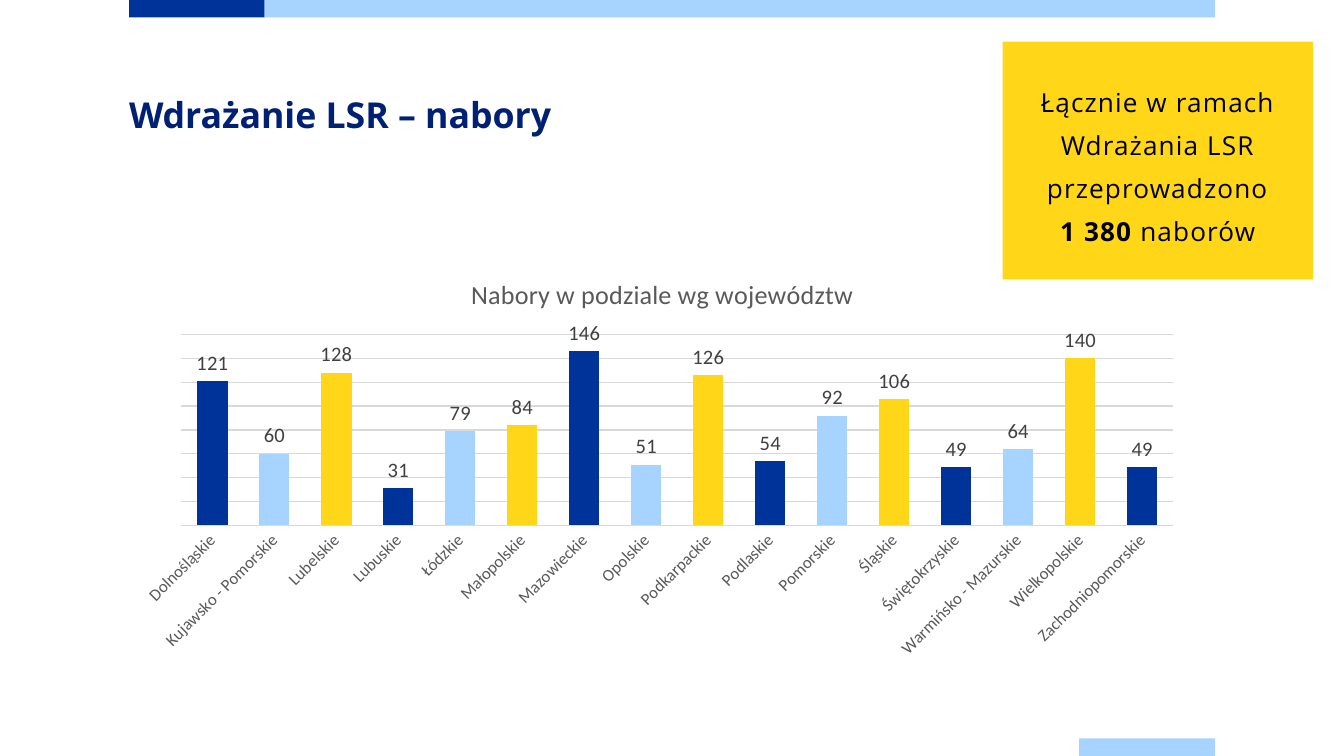
from lxml.etree import SubElement
from pptx import Presentation
from pptx.chart.data import CategoryChartData
from pptx.dml.color import RGBColor
from pptx.enum.chart import XL_CHART_TYPE as ChartType, XL_LABEL_POSITION as LabelPosition
from pptx.enum.chart import XL_TICK_MARK as TickMark
from pptx.enum.shapes import MSO_SHAPE as Shape
from pptx.enum.text import MSO_ANCHOR as Anchor, MSO_AUTO_SIZE as AutoSize, PP_ALIGN as Align
from pptx.oxml import parse_xml
from pptx.oxml.ns import nsdecls, qn
from pptx.util import Inches, Pt

WIDTH = 10
HEIGHT = WIDTH * 9 / 16
MARGIN, COLUMN, BAND = 0.96, 1.01, 0.13
CONTENT = 8 * COLUMN
CHART_LEFT, CHART_TOP, CHART_WIDTH, CHART_HEIGHT = 0.92, 1.96, 7.97, 3
COLORS = {
    "navy": "003399", "sky": "A6D3FF", "yellow": "FFD618", "title": "002073",
    "black": "000000", "gray": "595959", "label": "404040", "grid": "D9D9D9",
}
BAR_CYCLE = ("navy", "sky", "yellow")
CALLS = {
    "Dolnośląskie": 121, "Kujawsko - Pomorskie": 60, "Lubelskie": 128, "Lubuskie": 31,
    "Łódzkie": 79, "Małopolskie": 84, "Mazowieckie": 146, "Opolskie": 51,
    "Podkarpackie": 126, "Podlaskie": 54, "Pomorskie": 92, "Śląskie": 106,
    "Świętokrzyskie": 49, "Warmińsko - Mazurskie": 64, "Wielkopolskie": 140,
    "Zachodniopomorskie": 49,
}
TITLE_SHARES = {"x": 0.32, "y": 0.02}
PLOT_SHARES = {
    "x": 0.43 / CHART_WIDTH, "y": 0.53 / CHART_HEIGHT,
    "w": 7.38 / CHART_WIDTH, "h": 1.42 / CHART_HEIGHT,
}


def color(name):
    """Return the named colour."""
    return RGBColor.from_string(COLORS[name])


def paint(target, name):
    """Give an object a solid fill."""
    target.fill.solid()
    target.fill.fore_color.rgb = color(name)


def style_font(font, size, name, family="Calibri", bold=False):
    """Format a font."""
    font.size, font.name, font.bold = Pt(size), family, bold
    font.color.rgb = color(name)


def style_line(line, name):
    """Format a thin chart line."""
    line.color.rgb = color(name)
    line.width = Pt(0.75)


def add_run(paragraph, text, spacing=0, **style):
    """Add a run of formatted text with letter spacing in points."""
    run = paragraph.add_run()
    run.text = text
    style_font(run.font, **style)
    if spacing:
        run.font._element.set("spc", str(round(spacing * 100)))


def add_block(slide, left, top, width, height, fill):
    """Add a plain filled rectangle."""
    box = map(Inches, (left, top, width, height))
    block = slide.shapes.add_shape(Shape.RECTANGLE, *box)
    block.shadow.inherit = False
    block.line.fill.background()
    paint(block, fill)
    return block


def place_title(slide, text):
    """Move and format the title placeholder."""
    title = slide.shapes.title
    title.left, title.top = Inches(MARGIN), Inches(0.67)
    title.width, title.height = Inches(CONTENT), Inches(0.8)
    frame = title.text_frame
    frame.margin_left = frame.margin_right = frame.margin_top = frame.margin_bottom = 0
    frame.vertical_anchor, frame.word_wrap = Anchor.TOP, True
    frame.auto_size = AutoSize.NONE
    paragraph = frame.paragraphs[0]
    paragraph.alignment, paragraph.line_spacing = Align.LEFT, Pt(24.5)
    add_run(paragraph, text, size=19.1, name="title", family="Open Sans", bold=True)


def add_callout(slide, lead, number, unit):
    """Add the yellow box with the total."""
    callout = add_block(slide, 7.46, 0.31, 2.31, 1.77, "yellow")
    frame = callout.text_frame
    frame.word_wrap, frame.vertical_anchor = True, Anchor.MIDDLE
    paragraph = frame.paragraphs[0]
    paragraph.alignment, paragraph.line_spacing = Align.CENTER, Pt(23)
    style = {"size": 14, "name": "black", "family": "Open Sans", "spacing": 0.6}
    add_run(paragraph, lead, **style)
    paragraph.add_line_break()
    add_run(paragraph, number, bold=True, **style)
    add_run(paragraph, unit, **style)


def set_layout(parent, position, shares, **target):
    """Fix a chart part at shares of the chart."""
    for old in parent.findall(qn("c:layout")):
        parent.remove(old)
    layout = parse_xml(f"<c:layout {nsdecls('c')}/>")
    manual = SubElement(layout, qn("c:manualLayout"))
    settings = {**target, "xMode": "edge", "yMode": "edge", **shares}
    for tag, value in settings.items():
        SubElement(manual, qn(f"c:{tag}")).set("val", str(value))
    parent.insert(position, layout)


def format_axes(chart):
    """Format the slanted category labels and the gridlines."""
    categories, values = chart.category_axis, chart.value_axis
    categories.major_tick_mark = categories.minor_tick_mark = TickMark.NONE
    style_font(categories.tick_labels.font, 9, "gray")
    body = categories._element.find(qn("c:txPr")).find(qn("a:bodyPr"))
    body.set("rot", "-2700000")
    body.set("vert", "horz")
    style_line(categories.format.line, "grid")
    values.minimum_scale, values.maximum_scale, values.major_unit = 0, 160, 20
    values.has_major_gridlines = True
    style_line(values.major_gridlines.format.line, "grid")
    values.visible = False


def format_bars(plot):
    """Format the bars and their value labels."""
    plot.gap_width, plot.overlap, plot.vary_by_categories = 105, -27, False
    series = plot.series[0]
    paint(series.format, BAR_CYCLE[0])
    for index in range(len(CALLS)):
        paint(series.points[index].format, BAR_CYCLE[index % len(BAR_CYCLE)])
    labels = series.data_labels
    labels.show_value, labels.position = True, LabelPosition.OUTSIDE_END
    style_font(labels.font, 11, "label")


def add_column_chart(slide, title):
    """Add the column chart of calls by voivodeship."""
    data = CategoryChartData()
    data.categories = list(CALLS)
    data.add_series("Series 1", list(CALLS.values()))
    box = map(Inches, (CHART_LEFT, CHART_TOP, CHART_WIDTH, CHART_HEIGHT))
    chart = slide.shapes.add_chart(ChartType.COLUMN_CLUSTERED, *box, data).chart
    style_font(chart.font, 10, "black")
    chart.has_legend, chart.has_title = False, True
    heading = chart.chart_title
    add_run(heading.text_frame.paragraphs[0], title, size=14, name="gray")
    heading.include_in_layout = False
    format_axes(chart)
    format_bars(chart.plots[0])
    set_layout(heading._element, 1, TITLE_SHARES)
    set_layout(chart._chartSpace.chart.plotArea, 0, PLOT_SHARES, layoutTarget="inner")


def main():
    """Build and save the slide."""
    presentation = Presentation()
    presentation.slide_width, presentation.slide_height = Inches(WIDTH), Inches(HEIGHT)
    slide = presentation.slides.add_slide(presentation.slide_layouts[5])
    add_block(slide, MARGIN, 0, COLUMN, BAND, "navy")
    add_block(slide, MARGIN + COLUMN, 0, CONTENT - COLUMN, BAND, "sky")
    add_block(slide, MARGIN + CONTENT - COLUMN, HEIGHT - BAND, COLUMN, BAND, "sky")
    place_title(slide, "Wdrażanie LSR – nabory")
    add_column_chart(slide, "Nabory w podziale wg województw")
    add_callout(slide, "Łącznie w ramach Wdrażania LSR przeprowadzono", "1 380", " naborów")
    presentation.save("out.pptx")


if __name__ == "__main__":
    main()
